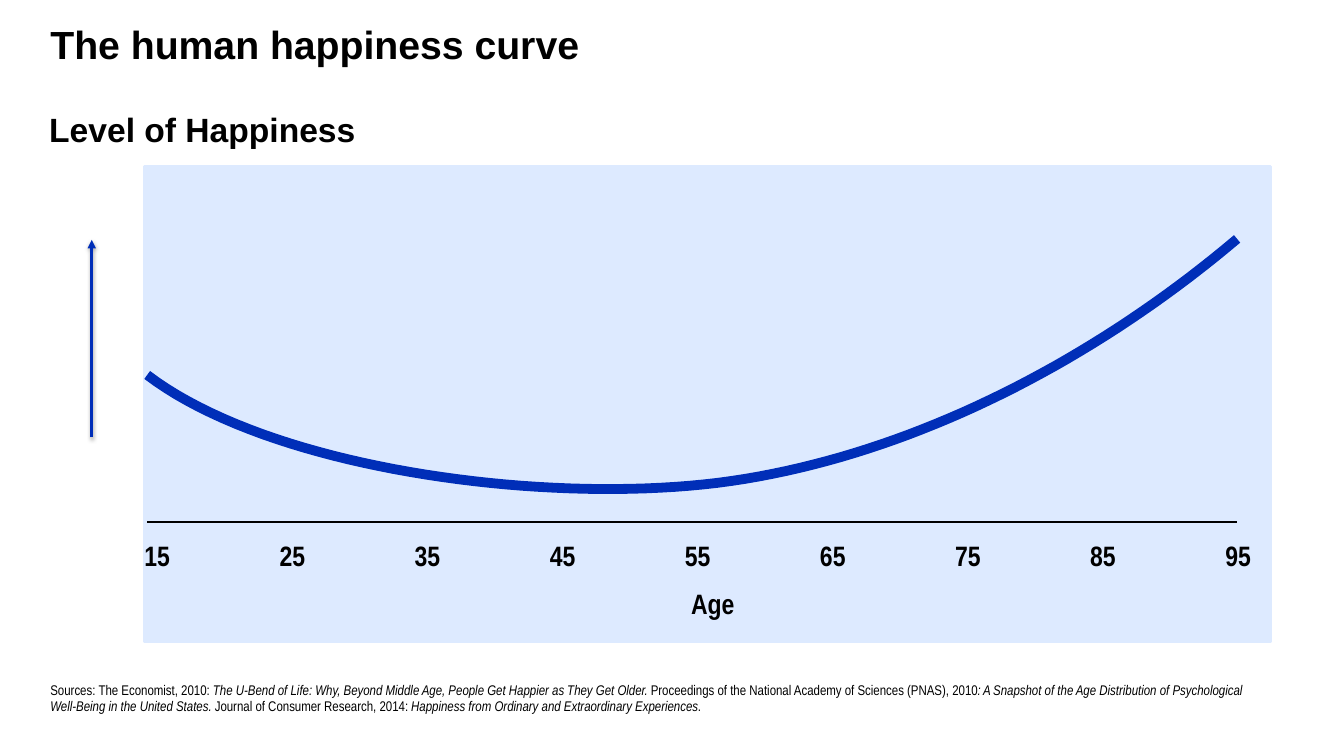
from lxml.etree import SubElement
from pptx import Presentation
from pptx.dml.color import RGBColor
from pptx.enum.shapes import MSO_CONNECTOR, MSO_SHAPE
from pptx.enum.text import MSO_ANCHOR, MSO_AUTO_SIZE, PP_ALIGN
from pptx.oxml.ns import qn
from pptx.util import Pt

PX = 9144  # EMU; 100 px to the inch
BLACK, BLUE, PALE_BLUE = "000000", "002EB8", "DDEAFF"
AGES = range(15, 96, 10)
SOURCES = [  # (text, italic)
    ("Sources: The Economist, 2010: ", False),
    ("The U-Bend of Life: Why, Beyond Middle Age, People Get Happier as They Get Older.", True),
    (" Proceedings of the National Academy of Sciences (PNAS), 2010", False),
    (": A Snapshot of the Age Distribution of Psychological Well-Being in the United States.", True),
    (" Journal of Consumer Research, 2014: ", False),
    ("Happiness from Ordinary and Extraordinary Experiences", True),
    (".", False),
]


def px(*lengths):
    return [round(n * PX) for n in lengths]


def rgb(color):
    return RGBColor.from_string(color)


def set_line(sp, color, width):
    sp.line.color.rgb = rgb(color)
    sp.line.width = Pt(width)


def set_font(p, size, name, bold=True):
    p.font.size, p.font.name, p.font.bold = Pt(size), name, bold
    p.font.color.rgb = rgb(BLACK)


def clear_margins(tf):
    tf.margin_left = tf.margin_top = tf.margin_right = tf.margin_bottom = 0


def add_text(shapes, text, box, size, name, align=PP_ALIGN.LEFT, wrap=True):
    tf = shapes.add_textbox(*px(*box)).text_frame
    tf.word_wrap = wrap
    p = tf.paragraphs[0]
    p.text, p.alignment = text, align
    set_font(p, size, name)


def add_line(slide, x1, y1, x2, y2, color, width):
    """Add a straight connector and return it with its empty effect list."""
    line = slide.shapes.add_connector(MSO_CONNECTOR.STRAIGHT, *px(x1, y1, x2, y2))
    set_line(line, color, width)
    effects = SubElement(line._element.spPr, qn("a:effectLst"))
    return line, effects


def add_title(slide, x, y, w, h):
    title = slide.shapes.title
    title.left, title.top, title.width, title.height = px(x, y, w, h)
    tf = title.text_frame
    clear_margins(tf)
    tf.auto_size = MSO_AUTO_SIZE.NONE
    tf.vertical_anchor = MSO_ANCHOR.TOP
    p = tf.paragraphs[0]
    p.text, p.alignment = "The human happiness curve", PP_ALIGN.LEFT
    set_font(p, 28, "Arial")


def bezier(points, steps=40):
    """Return points along a cubic curve, without its start."""
    a, b, c, d = points
    curve = []
    for i in range(1, steps + 1):
        t = i / steps
        u = 1 - t
        curve.append([u**3 * a[k] + 3 * u * u * t * b[k] + 3 * u * t * t * c[k] + t**3 * d[k]
                      for k in (0, 1)])
    return curve


def add_curve(slide, x, y):
    start, low, end = (3, 207), (569, 314), (1084, 72)
    points = (bezier([start, (124, 299), (389, 336), low])
              + bezier([low, (750, 291), (934, 199), end]))
    builder = slide.shapes.build_freeform(*px(x + start[0], y + start[1]))
    builder.add_line_segments([px(x + dx, y + dy) for dx, dy in points], close=False)
    curve = builder.convert_to_shape()
    curve.shadow.inherit = False
    curve.fill.background()
    set_line(curve, BLUE, 7)


def add_happiness_chart(slide, x, y, w, h):
    panel = slide.shapes.add_shape(MSO_SHAPE.RECTANGLE, *px(x, y, w, h))
    panel.shadow.inherit = False
    panel.fill.solid()
    panel.fill.fore_color.rgb = rgb(PALE_BLUE)
    set_line(panel, PALE_BLUE, 2)

    add_text(slide.shapes, "Age", (x + 501, y + 412, 126, 44), 20, "Arial Narrow", PP_ALIGN.CENTER)
    axis_y = y + 353
    add_line(slide, x + 3, axis_y, x + 1084, axis_y, BLACK, 1)
    add_curve(slide, x, y)
    labels = slide.shapes.add_group_shape()
    for i, age in enumerate(AGES):
        add_text(labels.shapes, str(age), (x - 30 + 134 * i, axis_y + 11, 86, 43),
                 20, "Arial Narrow", PP_ALIGN.CENTER)


def add_level_axis(slide, x, y, w, h):
    """Add the heading and, below it, the upward arrow."""
    add_text(slide.shapes, "Level of Happiness", (x, y, w, 50), 24, "Arial", wrap=False)
    arrow, effects = add_line(slide, x + 52, y + h, x + 52, y + 135, BLUE, 2)
    SubElement(arrow.line._get_or_add_ln(), qn("a:tailEnd"), type="triangle")
    shadow = SubElement(effects, qn("a:outerShdw"), blurRad=str(Pt(3.1)), dist=str(Pt(1.6)),
                        dir="5400000", rotWithShape="0")
    color = SubElement(shadow, qn("a:srgbClr"), val=BLACK)
    SubElement(color, qn("a:alpha"), val="38000")


def add_sources(slide, x, y, w, h):
    tf = slide.shapes.add_textbox(*px(x, y, w, h)).text_frame
    clear_margins(tf)
    tf.word_wrap = True
    tf.vertical_anchor = MSO_ANCHOR.BOTTOM
    p = tf.paragraphs[0]
    set_font(p, 10, "Arial Narrow", bold=False)
    for text, italic in SOURCES:
        r = p.add_run()
        r.text, r.font.italic = text, italic


def main():
    prs = Presentation()
    prs.slide_width, prs.slide_height = px(1333, 750)
    slide = prs.slides.add_slide(prs.slide_layouts[5])
    add_title(slide, 50, 20, 980, 47)
    add_happiness_chart(slide, 143, 165, 1117, 472)
    add_level_axis(slide, 39, 103, 327, 331)
    add_sources(slide, 50, 675, 1184, 34)
    prs.save("out.pptx")


if __name__ == "__main__":
    main()
